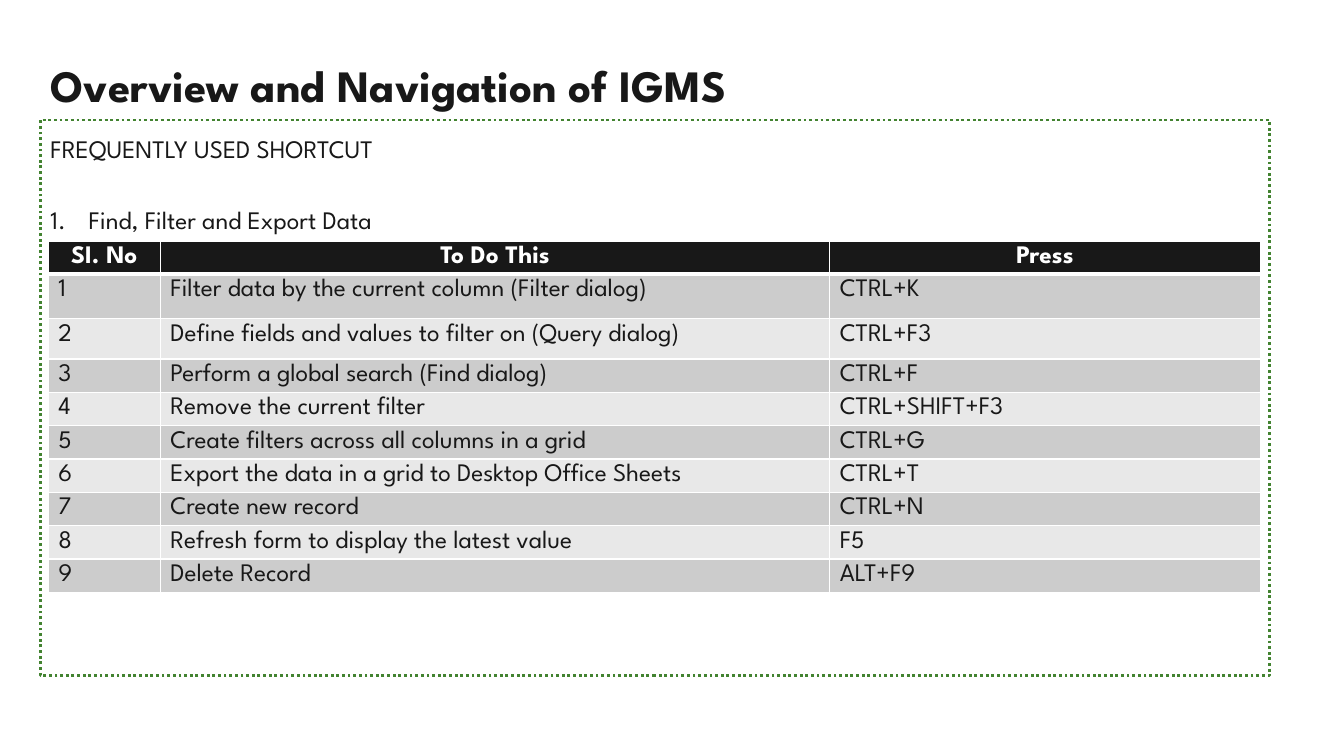
from lxml.etree import SubElement as Sub
from pptx import Presentation
from pptx.dml.color import RGBColor as RGB
from pptx.enum.dml import MSO_LINE as Dash
from pptx.enum.text import MSO_ANCHOR as Anchor, MSO_AUTO_SIZE as Auto, PP_ALIGN as Align
from pptx.oxml.ns import qn
from pptx.util import Inches, Pt

FONT = "League Spartan"
INK, WHITE, GREEN = "181818", "FFFFFF", "438331"
BANDS = ["CCCCCC", "E8E8E8"]
WIDTHS = [1.11, 6.64, 4.27]
HEADS = ["SI. No", "To Do This", "Press"]
KEYS = [
    ("Filter data by the current column (Filter dialog)", "CTRL+K"),
    ("Define fields and values to filter on (Query dialog)", "CTRL+F3"),
    ("Perform a global search (Find dialog)", "CTRL+F"),
    ("Remove the current filter", "CTRL+SHIFT+F3"),
    ("Create filters across all columns in a grid", "CTRL+G"),
    ("Export the data in a grid to Desktop Office Sheets", "CTRL+T"),
    ("Create new record", "CTRL+N"),
    ("Refresh form to display the latest value", "F5"),
    ("Delete Record", "ALT+F9"),
]
TALL = {1: 0.44, 2: 0.4}


def tint(code):
    return RGB.from_string(code)


def write(para, text, size=18, color=INK, bold=False, align=Align.LEFT, before=0):
    para.alignment = align
    para.space_before = Pt(before)
    run = para.add_run()
    run.text = text
    font = run.font
    font.name, font.size, font.bold = FONT, Pt(size), bold
    font.color.rgb = tint(color)


def bullet(para, number=False):
    props = para._p.get_or_add_pPr()
    hang = Inches(0.38) if number else 0
    props.set("marL", str(hang))
    props.set("indent", str(-hang))
    if number:
        Sub(props, qn("a:buFont")).set("typeface", "+mj-lt")
        Sub(props, qn("a:buAutoNum")).set("type", "arabicPeriod")
    else:
        Sub(props, qn("a:buNone"))


def place(shape, top, height, inset, anchor):
    shape.left, shape.width = Inches(0.4), Inches(12.19)
    shape.top, shape.height = Inches(top), Inches(height)
    frame = shape.text_frame
    frame.auto_size = Auto.NONE
    frame.word_wrap = True
    frame.margin_top = Inches(inset)
    frame.vertical_anchor = anchor
    return frame


def edge(cell, side, width):
    line = Sub(cell._tc.get_or_add_tcPr(), qn(f"a:ln{side}"), w=str(Pt(width)))
    Sub(Sub(line, qn("a:solidFill")), qn("a:srgbClr")).set("val", WHITE)


def paint(cell, text, back, top=1, bottom=1, **style):
    for side, width in zip("LRTB", (1, 1, top, bottom)):
        edge(cell, side, width)
    cell.fill.solid()
    cell.fill.fore_color.rgb = tint(back)
    write(cell.text_frame.paragraphs[0], text, **style)


def grid(slide):
    rows = [(str(n), *key) for n, key in enumerate(KEYS, 1)]
    highs = [TALL.get(n, 0.33) for n in range(len(rows) + 1)]
    table = slide.shapes.add_table(
        len(highs), len(WIDTHS), Inches(0.48), Inches(2.39),
        Inches(sum(WIDTHS)), Inches(sum(highs))).table
    for col, width in zip(table.columns, WIDTHS):
        col.width = Inches(width)
    for row, high in zip(table.rows, highs):
        row.height = Inches(high)
    for c, head in enumerate(HEADS):
        paint(table.cell(0, c), head, INK, bottom=3,
              color=WHITE, bold=True, align=Align.CENTER)
    for r, row in enumerate(rows, 1):
        for c, text in enumerate(row):
            paint(table.cell(r, c), text, BANDS[(r - 1) % 2], top=3 if r == 1 else 1)


def main():
    deck = Presentation()
    deck.slide_width, deck.slide_height = Inches(13.33), Inches(7.5)
    slide = deck.slides.add_slide(deck.slide_layouts[1])

    title = place(slide.shapes.title, 0.3, 0.9, 0.23, Anchor.MIDDLE)
    write(title.paragraphs[0], "Overview and Navigation of IGMS", size=32, bold=True)

    panel = slide.placeholders[1]
    panel.line.color.rgb = tint(GREEN)
    panel.line.width = Pt(2)
    panel.line.dash_style = Dash.ROUND_DOT
    body = place(panel, 1.19, 5.51, 0.13, Anchor.TOP)
    first, item = body.paragraphs[0], body.add_paragraph()
    bullet(first)
    write(first, "FREQUENTLY USED SHORTCUT")
    bullet(item, number=True)
    write(item, "Find, Filter and Export Data", before=29)

    grid(slide)
    deck.save("out.pptx")


if __name__ == "__main__":
    main()
